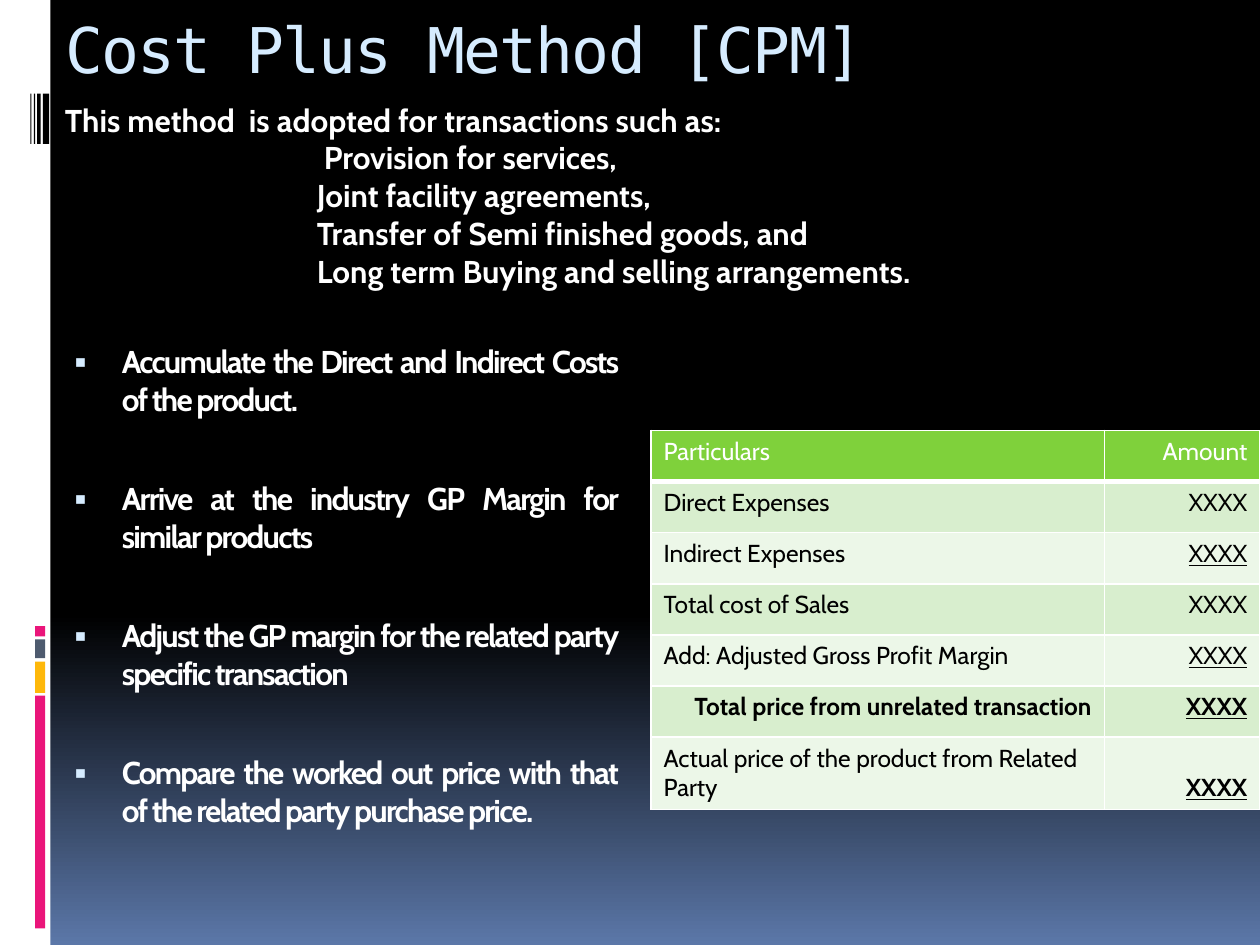
from lxml.etree import SubElement as Sub
from pptx import Presentation
from pptx.dml.color import RGBColor
from pptx.enum.shapes import MSO_SHAPE as Shape
from pptx.enum.text import MSO_ANCHOR as Anchor, MSO_AUTO_SIZE as Auto, PP_ALIGN as Align
from pptx.oxml.ns import qn
from pptx.util import Pt

WHITE = RGBColor(0xFF, 0xFF, 0xFF)
BLACK = RGBColor(0, 0, 0)
BLUE = RGBColor(0x5B, 0x77, 0xA8)
PALE = RGBColor(0xD6, 0xEC, 0xFF)
PINK = RGBColor(0xEA, 0x15, 0x7A)
GOLD = RGBColor(0xFE, 0xB8, 0x0A)
SLATE = RGBColor(0x4E, 0x5B, 0x6F)
GREEN = RGBColor(0x7F, 0xD1, 0x3B)
BANDS = RGBColor(0xD8, 0xEE, 0xCE), RGBColor(0xEC, 0xF7, 0xE8)
SANS, MONO = "Cabin", "DejaVu Sans Mono"

USES = [
    "Provision for services,",
    "Joint facility agreements,",
    "Transfer of Semi finished goods, and",
    "Long term Buying and selling arrangements.",
]
STEPS = [
    "Accumulate the Direct and Indirect Costs of the product.",
    "Arrive at the industry GP Margin for similar products",
    "Adjust the GP margin for the related party specific transaction",
    "Compare the worked out price with that of the related party purchase price.",
]
# label, amount, bold label, bold amount, underlined amount
ROWS = [
    ("Particulars", "Amount", False, False, False),
    ("Direct Expenses", "XXXX", False, False, False),
    ("Indirect Expenses", "XXXX", False, False, True),
    ("Total cost of Sales", "XXXX", False, False, False),
    ("Add: Adjusted Gross Profit Margin", "XXXX", False, False, True),
    ("Total price from unrelated transaction", "XXXX", True, True, True),
    ("Actual price of the product from Related Party", "XXXX", False, True, True),
]


def place(shape, x, y, w, h):
    shape.left, shape.top, shape.width, shape.height = Pt(x), Pt(y), Pt(w), Pt(h)


def style(para, size, color, face=SANS, bold=False, tight=False):
    for run in para.runs:
        font = run.font
        font.name, font.size, font.bold = face, Pt(size), bold
        font.color.rgb = color
        if tight:
            run._r.get_or_add_rPr().set("spc", "-100")


def setup(frame):
    frame.word_wrap = True
    frame.auto_size = Auto.NONE
    frame.vertical_anchor = Anchor.TOP


def indent(para, left, first=0):
    props = para._p.get_or_add_pPr()
    props.set("marL", str(Pt(left)))
    props.set("indent", str(Pt(first)))
    return props


def paint(slide):
    fill = slide.background.fill
    fill.gradient()
    fill.gradient_angle = 270
    for stop, spot, color in zip(fill.gradient_stops, (0.65, 1), (BLACK, BLUE)):
        stop.position = spot
        stop.color.rgb = color


def add_bar(slide, x, y, w, h, color):
    bar = slide.shapes.add_shape(Shape.RECTANGLE, Pt(x), Pt(y), Pt(w), Pt(h))
    bar.shadow.inherit = False
    bar.fill.solid()
    bar.fill.fore_color.rgb = color
    bar.line.fill.background()


def add_edge(slide, x, y, h):
    """White side strip with coloured blocks and a barcode."""
    add_bar(slide, x, y, 28.8, h, WHITE)
    blocks = (397.5, 133, PINK), (378, 18, GOLD), (365.3, 10.8, SLATE), (357.8, 5.8, PINK)
    for top, tall, color in blocks:
        add_bar(slide, x + 20, y + top, 5.8, tall, color)
    for left, wide in (24.5, 3.6), (21.2, 2), (19.4, 0.8), (17.3, 0.7):
        add_bar(slide, x + left, y + 53.5, wide, 28.8, BLACK)


def add_title(slide, x, y, w, h):
    title = slide.shapes.title
    place(title, x, y, w, h)
    frame = title.text_frame
    frame.text = "Cost Plus Method [CPM]"
    setup(frame)
    frame.margin_top = Pt(6)
    para = frame.paragraphs[0]
    para.alignment = Align.LEFT
    style(para, 36, PALE, MONO, tight=True)


def add_intro(slide, x, y, w, h):
    frame = slide.shapes.add_textbox(Pt(x), Pt(y), Pt(w), Pt(h)).text_frame
    setup(frame)
    frame.text = "\n".join(["This method  is adopted for transactions such as:", *USES])
    for i, para in enumerate(frame.paragraphs):
        if i:
            indent(para, 148 if i == 1 else 144)
        style(para, 18, WHITE, bold=True)


def add_steps(slide, x, y, w, h):
    body = slide.placeholders[1]
    place(body, x, y, w, h)
    frame = body.text_frame
    frame.text = "\n".join(STEPS)
    setup(frame)
    for i, para in enumerate(frame.paragraphs):
        props = indent(para, 32.4, -27)
        Sub(Sub(props, qn("a:buClr")), qn("a:srgbClr"), val=str(PALE))
        Sub(props, qn("a:buSzPct"), val="95000")
        Sub(props, qn("a:buFont"), typeface=SANS)
        Sub(props, qn("a:buChar"), char="▪")
        para.alignment = Align.JUSTIFY
        para.space_before = Pt(35 if i else 0)
        style(para, 18, WHITE, bold=True, tight=True)


def add_rules(cell, head):
    props = cell._tc.get_or_add_tcPr()
    for side in "LRTB":
        wide = 3 if head and side == "B" else 1
        line = Sub(props, qn("a:ln" + side), w=str(Pt(wide)))
        Sub(Sub(line, qn("a:solidFill")), qn("a:srgbClr"), val=str(WHITE))


def fill_cell(cell, text, row, right, bold, under=False):
    add_rules(cell, row == 0)
    cell.fill.solid()
    cell.fill.fore_color.rgb = BANDS[(row - 1) % 2] if row else GREEN
    cell.text = text
    para = cell.text_frame.paragraphs[0]
    para.alignment = Align.RIGHT if right else Align.LEFT
    style(para, 14, BLACK if row else WHITE, bold=bold)
    para.runs[0].font.underline = under


def add_prices(slide, x, y, w, h):
    count, step = len(ROWS), 29.2
    table = slide.shapes.add_table(count, 2, Pt(x), Pt(y), Pt(w), Pt(h)).table
    table.columns[0].width, table.columns[1].width = Pt(259.2), Pt(w - 259.2)
    for i, (label, amount, strong, heavy, under) in enumerate(ROWS):
        last = i == count - 1
        table.rows[i].height = Pt(h - step * i if last else step)
        fill_cell(table.cell(i, 0), label, i, strong, strong)
        fill_cell(table.cell(i, 1), amount, i, True, heavy, under)
    table.cell(count - 1, 1).vertical_anchor = Anchor.BOTTOM


def main():
    deck = Presentation()
    deck.slide_width, deck.slide_height = Pt(720), Pt(540)
    slide = deck.slides.add_slide(deck.slide_layouts[1])
    paint(slide)
    add_edge(slide, 0, 0, 540)
    add_title(slide, 30, 0, 612, 48)
    add_steps(slide, 30, 192, 330, 342)
    add_prices(slide, 372, 246, 348, 216)
    add_intro(slide, 30, 54, 672, 138)
    deck.save("out.pptx")


if __name__ == "__main__":
    main()
